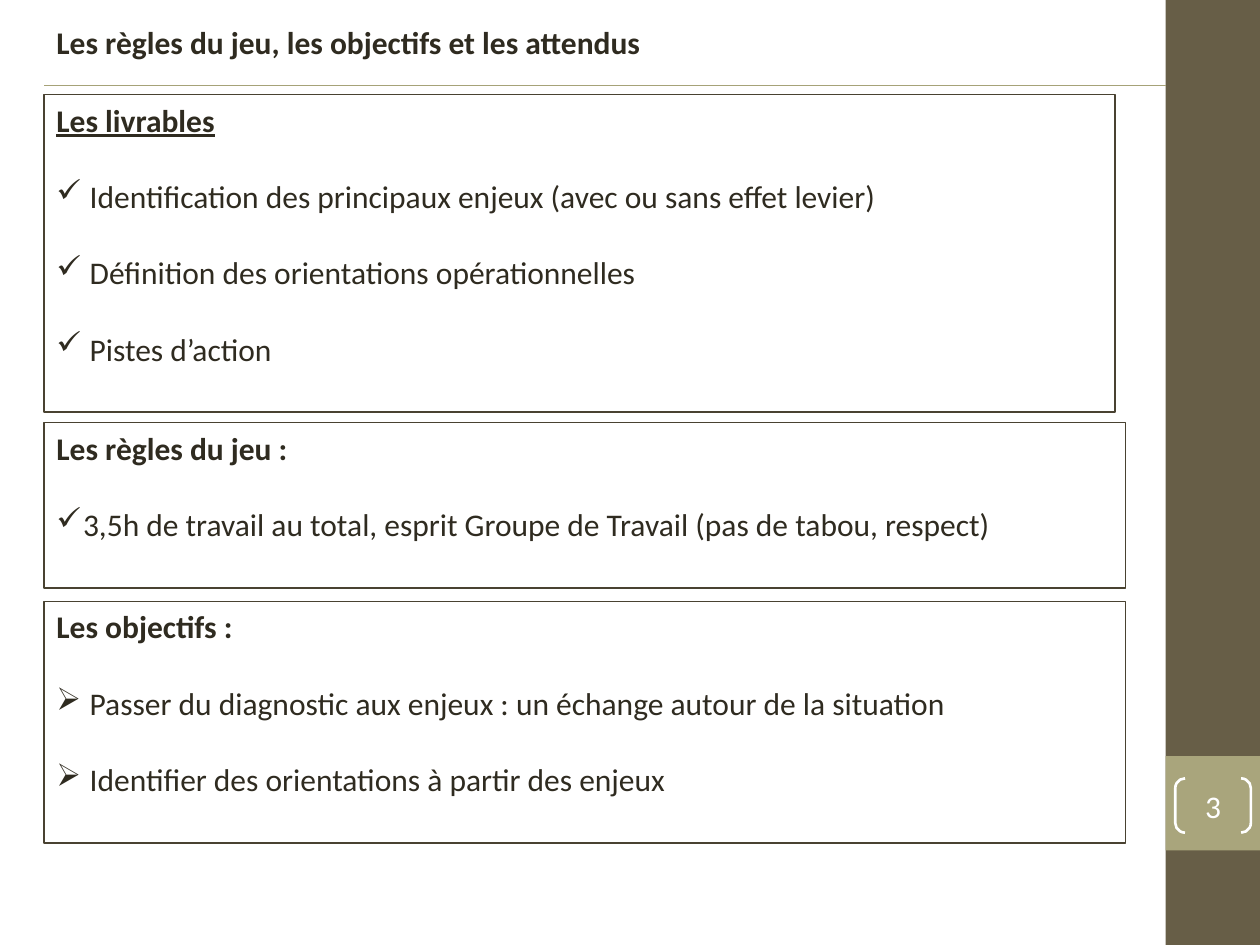
"""Build the slide on deliverables, rules and objectives."""
from pptx import Presentation
from pptx.util import Pt
from pptx.dml.color import RGBColor as Rgb
from pptx.enum.shapes import MSO_SHAPE as Shape, MSO_CONNECTOR as Conn
from pptx.enum.text import PP_ALIGN as Align, MSO_ANCHOR as Anchor
from pptx.oxml.ns import qn
from lxml.etree import SubElement as Sub

HUES = {"ink": "2F2B20", "bar": "675E47", "tab": "A9A57C",
        "rule": "A6A278", "edge": "494231", "white": "FFFFFF"}
FONT, SIZE, GAP = "Calibri", 18, 22
LEFT, BAR = 25.2, 666

TITLE = "Les règles du jeu, les objectifs et les attendus"
PAGE = "3"
BOXES = [
    {"head": "Les livrables", "line": True, "mark": "✓", "hang": 19,
     "top": 54, "wide": 612, "high": 181.4, "align": Align.LEFT,
     "items": ["Identification des principaux enjeux (avec ou sans effet levier)",
               "Définition des orientations opérationnelles",
               "Pistes d’action"]},
    {"head": "Les règles du jeu :", "line": False, "mark": "✓", "hang": 15.2,
     "top": 241.6, "wide": 618, "high": 94.4, "align": Align.JUSTIFY,
     "items": ["3,5h de travail au total, esprit Groupe de Travail "
               "(pas de tabou, respect)"]},
    {"head": "Les objectifs :", "line": False, "mark": "➢", "hang": 19,
     "top": 343.6, "wide": 618, "high": 138.2, "align": Align.LEFT,
     "items": ["Passer du diagnostic aux enjeux : un échange autour de la situation",
               "Identifier des orientations à partir des enjeux"]},
]


def hue(name):
    return Rgb.from_string(HUES[name])


def write(para, text, color="ink", bold=False, line=False,
          align=Align.LEFT, mark=None, hang=0, gap=0):
    run = para.add_run()
    run.text = text
    font = run.font
    font.name, font.size, font.bold, font.underline = FONT, Pt(SIZE), bold, line
    font.color.rgb = hue(color)
    para.alignment, para.space_before = align, Pt(gap)
    if mark:
        props = para._p.get_or_add_pPr()
        props.set("marL", str(Pt(hang)))
        props.set("indent", str(-Pt(hang)))
        Sub(props, qn("a:buChar")).set("char", mark)


def draw(slide, kind, area, fill=None, edge=None, width=0.75):
    form = slide.shapes.add_shape(kind, *map(Pt, area))
    form.shadow.inherit = False
    if fill:
        form.fill.solid()
        form.fill.fore_color.rgb = hue(fill)
    else:
        form.fill.background()
    if edge:
        form.line.color.rgb = hue(edge)
        form.line.width = Pt(width)
    else:
        form.line.fill.background()
    return form


def side(slide):
    draw(slide, Shape.RECTANGLE, (BAR, 0, 54, 540), fill="bar")
    draw(slide, Shape.RECTANGLE, (BAR, 432, 54, 54), fill="tab")
    pair = draw(slide, Shape.DOUBLE_BRACKET, (671.6, 444.8, 43.2, 31),
                edge="white", width=1.5)
    pair.adjustments[0] = 0.18
    frame = pair.text_frame
    frame.margin_left = frame.margin_right = Pt(0)
    frame.margin_top = frame.margin_bottom = Pt(0)
    frame.vertical_anchor = Anchor.MIDDLE
    write(frame.paragraphs[0], PAGE, color="white", align=Align.CENTER)


def head(slide):
    box = slide.shapes.add_textbox(Pt(LEFT), Pt(9.4), Pt(601), Pt(29))
    box.text_frame.word_wrap = True
    write(box.text_frame.paragraphs[0], TITLE, bold=True)
    rule = slide.shapes.add_connector(Conn.STRAIGHT, Pt(LEFT), Pt(48.8),
                                      Pt(BAR), Pt(48.8))
    rule.line.color.rgb = hue("rule")
    rule.line.width = Pt(1)
    Sub(rule._element.spPr, qn("a:effectLst"))


def panel(slide, box):
    form = draw(slide, Shape.RECTANGLE,
                (LEFT, box["top"], box["wide"], box["high"]), edge="edge")
    frame = form.text_frame
    frame.word_wrap = True
    frame.vertical_anchor = Anchor.TOP
    write(frame.paragraphs[0], box["head"], bold=True, line=box["line"],
          align=box["align"])
    for item in box["items"]:
        write(frame.add_paragraph(), item, align=box["align"],
              mark=box["mark"], hang=box["hang"], gap=GAP)


def main():
    deck = Presentation()
    deck.slide_width, deck.slide_height = Pt(720), Pt(540)
    slide = deck.slides.add_slide(deck.slide_layouts[6])
    side(slide)
    head(slide)
    for box in BOXES:
        panel(slide, box)
    deck.save("out.pptx")


if __name__ == "__main__":
    main()
